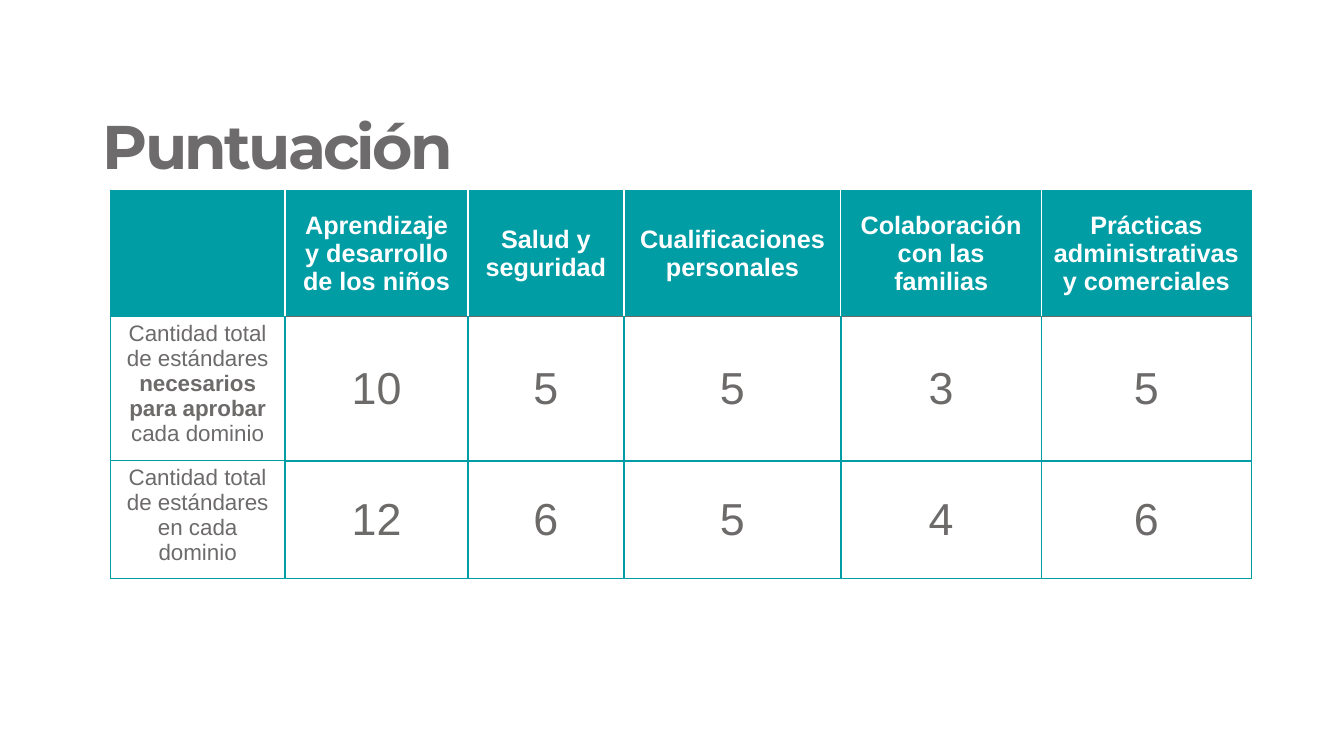
from dataclasses import dataclass

from pptx import Presentation
from pptx.dml.color import RGBColor
from pptx.enum.text import MSO_ANCHOR, PP_ALIGN
from pptx.oxml.ns import qn
from pptx.table import _Cell
from pptx.util import Inches, Pt
from lxml import etree

CENTER, LEFT = PP_ALIGN.CENTER, PP_ALIGN.LEFT
TOP, MIDDLE, BOTTOM = MSO_ANCHOR.TOP, MSO_ANCHOR.MIDDLE, MSO_ANCHOR.BOTTOM
TEAL, GRAY, WHITE, TITLE_GRAY = "009DA5", "6D6A6A", "FFFFFF", "6D6B6B"


@dataclass(frozen=True)
class Run:
    text: str
    bold: bool = False


@dataclass(frozen=True)
class Line:
    color: str
    width: float


@dataclass(frozen=True)
class Domain:
    name: str
    required: int
    total: int
    width: float


OUTER, INNER = Line(TEAL, 0.5), Line(TEAL, 1.5)
HEADER_RULE = Line(GRAY, 1)
HEADER_DIVIDERS = [Line(WHITE, w) for w in (1.5, 1.5, 1.5, 1, 1)]
LABEL_WIDTH = 1.74
ROW_HEIGHTS = [1.25, 1.43, 1.17]
DOMAINS = [
    Domain("Aprendizaje y desarrollo de los niños", 10, 12, 1.81),
    Domain("Salud y seguridad", 5, 6, 1.55),
    Domain("Cualificaciones personales", 5, 5, 2.15),
    Domain("Colaboración con las familias", 3, 4, 1.99),
    Domain("Prácticas administrativas y comerciales", 5, 6, 2.08),
]
REQUIRED_LABEL = [
    Run("Cantidad total de estándares "),
    Run("necesarios para aprobar", True),
    Run(" cada dominio"),
]
TOTAL_LABEL = [Run("Cantidad total de estándares en cada dominio")]


def rgb(color: str) -> RGBColor:
    return RGBColor.from_string(color)


def write(tf, runs: list[Run], *, size: float, color: str, font: str = "Arial",
          align: PP_ALIGN = CENTER, spacing: float | None = None,
          tracking: float | None = None) -> None:
    p = tf.paragraphs[0]
    p.alignment = align
    if spacing is not None:
        p.line_spacing = Pt(spacing)
    for run in runs:
        r = p.add_run()
        r.text = run.text
        r.font.name = font
        r.font.size = Pt(size)
        r.font.bold = run.bold
        r.font.color.rgb = rgb(color)
        if tracking is not None:
            r._r.get_or_add_rPr().set("spc", str(round(tracking * 100)))


def set_border(cell: _Cell, side: str, line: Line) -> None:
    tcPr = cell._tc.get_or_add_tcPr()
    ln = etree.SubElement(tcPr, qn(f"a:ln{side}"), w=str(Pt(line.width)))
    fill = etree.SubElement(ln, qn("a:solidFill"))
    etree.SubElement(fill, qn("a:srgbClr"), val=line.color)


def draw_borders(cell: _Cell, row: int, col: int) -> None:
    last_row, last_col = len(ROW_HEIGHTS) - 1, len(DOMAINS)
    dividers = HEADER_DIVIDERS if row == 0 else [INNER] * last_col
    verticals = [OUTER, *dividers, OUTER]
    rules = [OUTER, OUTER if col == 0 else HEADER_RULE,
             OUTER if col == 0 else INNER, OUTER]
    set_border(cell, "L", verticals[col])
    set_border(cell, "R", verticals[col + 1])
    set_border(cell, "T", rules[row])
    set_border(cell, "B", rules[min(row, last_row) + 1])


def draw_cell(cell: _Cell, row: int, col: int, runs: list[Run]) -> None:
    draw_borders(cell, row, col)
    if row == 0:
        cell.fill.solid()
        cell.fill.fore_color.rgb = rgb(TEAL)
        size, color = 18, WHITE
    else:
        cell.fill.background()
        size, color = (16 if col == 0 else 32), GRAY
    cell.vertical_anchor = TOP if col == 0 else MIDDLE
    write(cell.text_frame, runs, size=size, color=color)


def draw_title(s) -> None:
    title = s.shapes.title
    title.left, title.top = Inches(0.92), Inches(0.4)
    title.width, title.height = Inches(9.5), Inches(1.45)
    tf = title.text_frame
    tf.word_wrap = True
    tf.vertical_anchor = BOTTOM
    write(tf, [Run("Puntuación", True)], size=44, color=TITLE_GRAY,
          font="Montserrat", align=LEFT, spacing=44, tracking=-2)


def draw_scores(s) -> None:
    widths = [LABEL_WIDTH, *(d.width for d in DOMAINS)]
    rows = [
        [[], *([Run(d.name, True)] for d in DOMAINS)],
        [REQUIRED_LABEL, *([Run(str(d.required))] for d in DOMAINS)],
        [TOTAL_LABEL, *([Run(str(d.total))] for d in DOMAINS)],
    ]
    table = s.shapes.add_table(
        len(rows), len(widths), Inches(1.09), Inches(1.89),
        Inches(sum(widths)), Inches(sum(ROW_HEIGHTS))).table
    table.first_row = table.horz_banding = False
    for column, width in zip(table.columns, widths):
        column.width = Inches(width)
    for row, height in zip(table.rows, ROW_HEIGHTS):
        row.height = Inches(height)
    for i, row in enumerate(rows):
        for j, runs in enumerate(row):
            draw_cell(table.cell(i, j), i, j, runs)


def main() -> None:
    prs = Presentation()
    prs.slide_width, prs.slide_height = Inches(13.33), Inches(7.5)
    s = prs.slides.add_slide(prs.slide_layouts.get_by_name("Title Only"))
    draw_title(s)
    draw_scores(s)
    prs.save("out.pptx")


if __name__ == "__main__":
    main()
